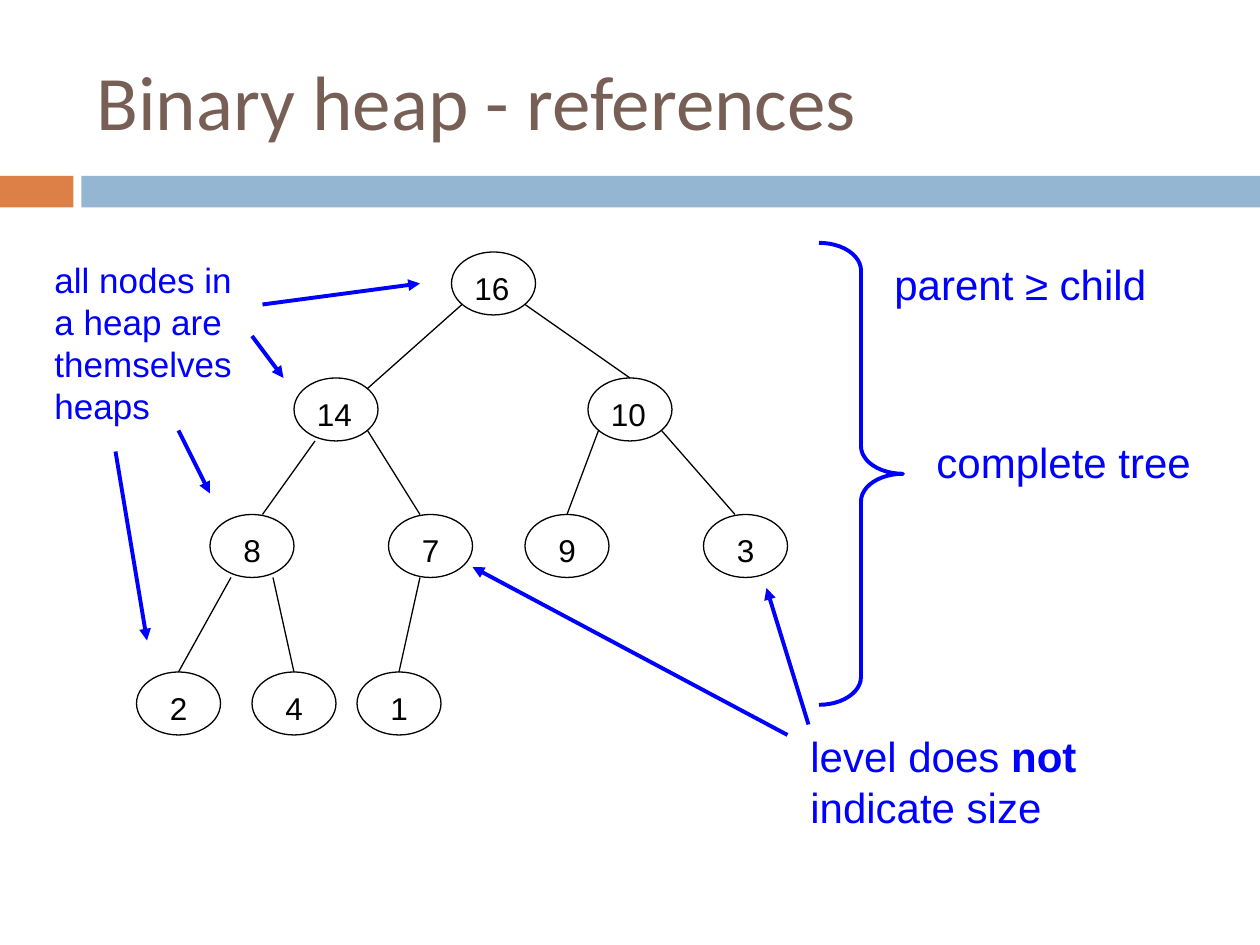
from lxml import etree
from pptx import Presentation
from pptx.dml.color import RGBColor
from pptx.enum.shapes import MSO_CONNECTOR, MSO_SHAPE
from pptx.enum.text import MSO_ANCHOR
from pptx.oxml.ns import qn
from pptx.util import Emu, Pt

STRAIGHT = MSO_CONNECTOR.STRAIGHT
RECTANGLE = MSO_SHAPE.RECTANGLE
ELLIPSE = MSO_SHAPE.OVAL
RIGHT_BRACE = MSO_SHAPE.RIGHT_BRACE
TOP, MIDDLE = MSO_ANCHOR.TOP, MSO_ANCHOR.MIDDLE

EMU_PER_PX = 9525
COLORS = {
    "title": "775F55",
    "accent": "DD8047",
    "band": "94B6D2",
    "ink": "000000",
    "note": "0000FF",
}
NODE_WIDTH, NODE_HEIGHT = 64, 48
LEVELS = [
    (192, [("16", 344)]),
    (288, [("14", 224), ("10", 448)]),
    (392, [("8", 160), ("7", 296), ("9", 400), ("3", 536)]),
    (512, [("2", 104), ("4", 192), ("1", 272)]),
]
EDGES = [
    (352, 232, 280, 296),
    (400, 232, 480, 288),
    (240, 336, 200, 392),
    (280, 328, 320, 392),
    (456, 328, 432, 392),
    (504, 328, 560, 392),
    (176, 440, 136, 512),
    (208, 440, 224, 512),
    (320, 440, 304, 512),
]
ARROWS = [
    (616, 552, 584, 448),
    (600, 560, 360, 432),
    (200, 232, 320, 216),
    (192, 256, 216, 288),
    (136, 328, 160, 376),
    (88, 344, 112, 488),
]
NOTES = [
    ([("parent ≥ child", False)], (672, 192, 256, 48), 24),
    ([("complete tree", False)], (704, 328, 224, 48), 24),
    ([("level does ", False), ("not", True), (" indicate size", False)],
     (608, 552, 296, 86), 24),
    ([("all nodes in a heap are themselves heaps", False)],
     (32, 192, 160, 137), 20),
]


def px(*lengths):
    return [Emu(length * EMU_PER_PX) for length in lengths]


def rgb(name):
    return RGBColor.from_string(COLORS[name])


class SlideBuilder:
    def __init__(self, slide, font="Arial"):
        self.slide = slide
        self.font = font

    def shape(self, kind, box, fill=None, line=None, width=0.75):
        shape = self.slide.shapes.add_shape(kind, *px(*box))
        shape.shadow.inherit = False
        if fill:
            shape.fill.solid()
            shape.fill.fore_color.rgb = rgb(fill)
        else:
            shape.fill.background()
        if line:
            shape.line.color.rgb = rgb(line)
            shape.line.width = Pt(width)
        else:
            shape.line.fill.background()
        return shape

    def text(self, runs, box, size, color, font=None, anchor=TOP):
        shape = self.slide.shapes.add_textbox(*px(*box))
        frame = shape.text_frame
        frame.word_wrap = True
        frame.vertical_anchor = anchor
        paragraph = frame.paragraphs[0]
        paragraph.font.name = font or self.font
        paragraph.font.size = Pt(size)
        paragraph.font.color.rgb = rgb(color)
        for content, bold in runs:
            run = paragraph.add_run()
            run.text = content
            if bold:
                run.font.bold = True
        return shape

    def line(self, ends, color, width, arrow=False):
        connector = self.slide.shapes.add_connector(STRAIGHT, *px(*ends))
        connector.line.color.rgb = rgb(color)
        connector.line.width = Pt(width)
        properties = connector._element.spPr
        if arrow:
            outline = properties.find(qn("a:ln"))
            etree.SubElement(outline, qn("a:tailEnd"), type="triangle")
        etree.SubElement(properties, qn("a:effectLst"))

    def node(self, value, left, top):
        ellipse = self.shape(
            ELLIPSE, (left, top, NODE_WIDTH, NODE_HEIGHT), line="ink")
        indent = 8 if len(value) > 1 else 16
        label = self.text(
            [(value, False)], (left + indent, top + 8, 56, 38), 18, "ink")
        self.slide.shapes.add_group_shape([ellipse, label])


def main():
    presentation = Presentation()
    presentation.slide_width, presentation.slide_height = px(960, 720)
    slide = presentation.slides.add_slide(presentation.slide_layouts[6])
    builder = SlideBuilder(slide)

    builder.shape(RECTANGLE, (0, 134, 56, 24), fill="accent")
    builder.shape(RECTANGLE, (62, 134, 898, 24), fill="band")
    builder.text([("Binary heap - references", False)], (64, 24, 880, 104),
                 44, "title", font="Calibri", anchor=MIDDLE)

    for top, nodes in LEVELS:
        for value, left in nodes:
            builder.node(value, left, top)
    for ends in EDGES:
        builder.line(ends, "ink", 0.75)

    brace = builder.shape(
        RIGHT_BRACE, (624, 185, 64, 352), line="note", width=2.25)
    brace.adjustments[0] = 0.33
    brace.adjustments[1] = 0.5
    for runs, box, size in NOTES:
        builder.text(runs, box, size, "note")
    for ends in ARROWS:
        builder.line(ends, "note", 2.25, arrow=True)

    presentation.save("out.pptx")


if __name__ == "__main__":
    main()
